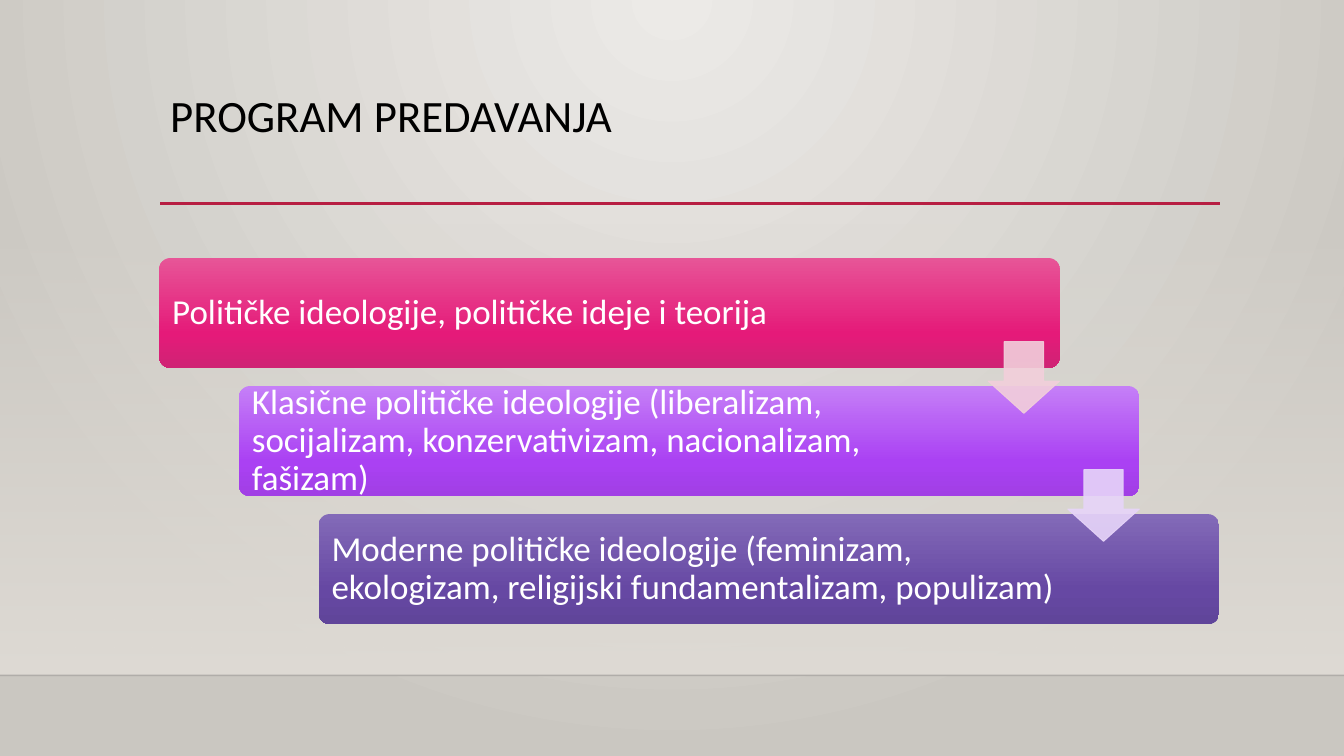
from lxml import etree
from pptx import Presentation
from pptx.dml.color import RGBColor
from pptx.enum.shapes import MSO_CONNECTOR, MSO_SHAPE
from pptx.enum.text import MSO_ANCHOR
from pptx.oxml.ns import qn
from pptx.util import Inches, Pt

RECTANGLE = MSO_SHAPE.RECTANGLE
ROUNDED = MSO_SHAPE.ROUNDED_RECTANGLE
DOWN_ARROW = MSO_SHAPE.DOWN_ARROW
STRAIGHT = MSO_CONNECTOR.STRAIGHT
TOP, MIDDLE = MSO_ANCHOR.TOP, MSO_ANCHOR.MIDDLE

COLORS = {
    "light": "ECEAE7", "floor": "CAC7C1", "wall": "DFDBD5",
    "edge": "000001", "accent": "B71E42", "title": "000000", "text": "FFFFFF",
}
TITLE = "PROGRAM PREDAVANJA"
STEPS = [
    ("Političke ideologije, političke ideje i teorija", 7.75,
     ("E75597", "E51A79", "CF2374")),
    ("Klasične političke ideologije (liberalizam, socijalizam, "
     "konzervativizam, nacionalizam, fašizam)", 7.37,
     ("C57FF7", "AA41F3", "A13FE5")),
    ("Moderne političke ideologije (feminizam, ekologizam, religijski "
     "fundamentalizam, populizam)", 7.37,
     ("836AB8", "6648A3", "60459A")),
]
ARROW_COLORS = ["F2CFDB", "E7D5F9"]
STOPS = (0, 69, 100)
FONT = "Calibri"
SLIDE_WIDTH, SLIDE_HEIGHT = 13.33, 7.5
BAR_LEFT, BAR_TOP, BAR_WIDTH, BAR_HEIGHT = 1.58, 2.56, 8.93, 1.09
STEP_X, STEP_Y = 0.79, 1.27
TEXT_INSET, ARROW_SIZE = 0.03, 0.71


def add_alpha(color, percent):
    etree.SubElement(color, qn("a:alpha"), val=str(percent * 1000))


def set_gradient(fill, parent, stops, circle=False):
    fill.solid()
    solid = parent.find(qn("a:solidFill"))
    gradient = etree.Element(qn("a:gradFill"), rotWithShape="1")
    stop_list = etree.SubElement(gradient, qn("a:gsLst"))
    for position, color, alpha in stops:
        stop = etree.SubElement(stop_list, qn("a:gs"), pos=str(position * 1000))
        add_alpha(etree.SubElement(stop, qn("a:srgbClr"), val=color), alpha)
    if circle:
        shade = etree.SubElement(gradient, qn("a:path"), path="circle")
        etree.SubElement(shade, qn("a:fillToRect"),
                         l="43000", t="0", r="43000", b="100000")
    else:
        etree.SubElement(gradient, qn("a:lin"), ang="5400000", scaled="0")
    parent.replace(solid, gradient)


def add_block(slide, kind, left, top, width, height):
    shape = slide.shapes.add_shape(
        kind, Inches(left), Inches(top), Inches(width), Inches(height))
    shape.shadow.inherit = False
    shape.line.fill.background()
    return shape


def add_rule(slide, left, right, top, color, weight, alpha=100):
    rule = slide.shapes.add_connector(
        STRAIGHT, Inches(left), Inches(top), Inches(right), Inches(top))
    rule.line.color.rgb = RGBColor.from_string(color)
    rule.line.width = Pt(weight)
    properties = rule.element.spPr
    add_alpha(next(properties.iter(qn("a:srgbClr"))), alpha)
    etree.SubElement(properties, qn("a:effectLst"))


def add_text(slide, text, left, top, width, height, size, color, anchor, inset):
    box = slide.shapes.add_textbox(
        Inches(left), Inches(top), Inches(width), Inches(height))
    frame = box.text_frame
    frame.word_wrap = True
    frame.vertical_anchor = anchor
    frame.margin_left = frame.margin_right = Inches(0.1)
    frame.margin_top = frame.margin_bottom = Inches(inset)
    paragraph = frame.paragraphs[0]
    paragraph.line_spacing = 0.9
    run = paragraph.add_run()
    run.text = text
    run.font.name = FONT
    run.font.size = Pt(size)
    run.font.color.rgb = RGBColor.from_string(color)


def add_step(slide, index, text, text_width, colors):
    left, top = BAR_LEFT + index * STEP_X, BAR_TOP + index * STEP_Y
    bar = add_block(slide, ROUNDED, left, top, BAR_WIDTH, BAR_HEIGHT)
    bar.adjustments[0] = 0.1
    set_gradient(bar.fill, bar.element.spPr,
                 [(stop, color, 100) for stop, color in zip(STOPS, colors)])
    add_text(slide, text, left + TEXT_INSET, top + TEXT_INSET, text_width,
             BAR_HEIGHT - 2 * TEXT_INSET, 25, COLORS["text"], MIDDLE, 0.1)


def add_arrow(slide, index, color):
    left = BAR_LEFT + BAR_WIDTH - ARROW_SIZE + index * STEP_X
    arrow = add_block(slide, DOWN_ARROW, left, 3.39 + index * STEP_Y,
                      ARROW_SIZE, ARROW_SIZE)
    arrow.adjustments[0] = 0.55
    arrow.adjustments[1] = 0.45
    arrow.fill.solid()
    arrow.fill.fore_color.rgb = RGBColor.from_string(color)
    arrow.line.color.rgb = RGBColor.from_string(color)
    arrow.line.width = Pt(0.75)
    for element in arrow.element.spPr.iter(qn("a:srgbClr")):
        add_alpha(element, 90)


def main():
    presentation = Presentation()
    presentation.slide_width = Inches(SLIDE_WIDTH)
    presentation.slide_height = Inches(SLIDE_HEIGHT)
    slide = presentation.slides.add_slide(presentation.slide_layouts[6])

    background = slide.background.fill
    background.solid()
    set_gradient(background, next(slide.element.iter(qn("p:bgPr"))),
                 [(0, COLORS["light"], 100), (100, COLORS["floor"], 100)], True)
    wall = add_block(slide, RECTANGLE, 0, 2.21, SLIDE_WIDTH, 4.49)
    set_gradient(wall.fill, wall.element.spPr,
                 [(0, COLORS["wall"], 0), (100, COLORS["wall"], 100)])
    add_rule(slide, 0, SLIDE_WIDTH, 6.7, COLORS["edge"], 1, 20)
    add_rule(slide, 1.59, 12.1, 2.02, COLORS["accent"], 2.5)
    add_text(slide, TITLE, 1.59, 0.88, 10.5, 1.15, 32, COLORS["title"], TOP, 0.05)

    for index, (text, text_width, colors) in enumerate(STEPS):
        add_step(slide, index, text, text_width, colors)
    for index, color in enumerate(ARROW_COLORS):
        add_arrow(slide, index, color)
    presentation.save("out.pptx")


if __name__ == "__main__":
    main()
